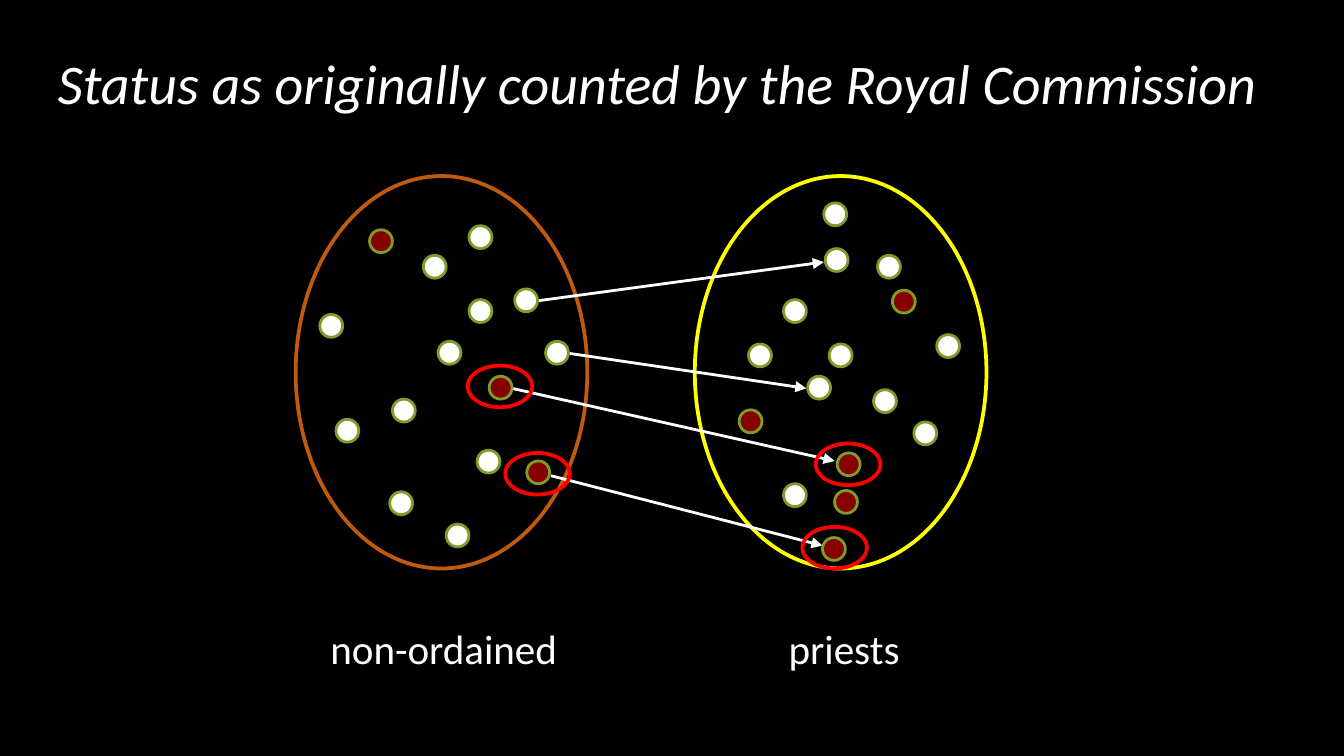
"""Build a slide of two groups of people, with arrows for those who moved between them."""
import pptx
import pptx.dml.color
import pptx.enum.shapes
import pptx.enum.text
import pptx.oxml.ns
import pptx.util
import lxml.etree

COLORS = {
    "background": "000000",
    "text": "FFFFFF",
    "non-ordained": "C05A0E",
    "priests": "FFFF00",
    "white": "FFFFFF",
    "red": "860000",
    "rim": "7F9D26",
    "ring": "FF0000",
    "arrow": "FFFFFF",
}
COLUMNS, ROWS = 1000, 562.5
DOT = 17

presentation = pptx.Presentation()
presentation.slide_width = pptx.util.Inches(10)
presentation.slide_height = presentation.slide_width * 9 // 16
column = presentation.slide_width / COLUMNS
row = presentation.slide_height / ROWS
slide = presentation.slides.add_slide(presentation.slide_layouts[6])
slide.background.fill.solid()
slide.background.fill.fore_color.rgb = pptx.dml.color.RGBColor.from_string(COLORS["background"])


def add_text(text, left, top, width, height, size=22, italic=False):
    shape = slide.shapes.add_textbox(
        round(left * column), round(top * row), round(width * column), round(height * row))
    shape.text_frame.word_wrap = True
    shape.text_frame.auto_size = pptx.enum.text.MSO_AUTO_SIZE.SHAPE_TO_FIT_TEXT
    paragraph = shape.text_frame.paragraphs[0]
    run = paragraph.add_run()
    run.text = text
    run.font.name = "Calibri"
    run.font.size = pptx.util.Pt(size)
    run.font.italic = italic
    run.font.color.rgb = pptx.dml.color.RGBColor.from_string(COLORS["text"])


def add_ellipse(left, top, width, height, line, fill=None, weight=2):
    shape = slide.shapes.add_shape(
        pptx.enum.shapes.MSO_SHAPE.OVAL,
        round(left * column), round(top * row), round(width * column), round(height * row))
    shape.shadow.inherit = False
    if fill:
        shape.fill.solid()
        shape.fill.fore_color.rgb = pptx.dml.color.RGBColor.from_string(COLORS[fill])
    else:
        shape.fill.background()
    shape.line.color.rgb = pptx.dml.color.RGBColor.from_string(COLORS[line])
    shape.line.width = pptx.util.Pt(weight)


add_ellipse(220, 131, 217, 292, "non-ordained")
add_text("Status as originally counted by the Royal Commission", 33, 31, 975, 61, size=30, italic=True)
add_ellipse(517, 131, 217, 292, "priests")
add_text("non-ordained", 236, 459, 201, 47)
add_text("priests", 577, 459, 116, 47)

dots = [
    ("white", [(583, 223), (557, 256), (617, 256), (653, 190), (650, 290), (680, 314)]),
    ("red", [(664, 216), (550, 305)]),
    ("white", [(613, 151)]),
    ("red", [(621, 365), (275, 171)]),
    ("white", [(290, 366), (383, 215), (238, 234), (355, 335), (315, 190), (292, 297)]),
    ("red", [(364, 280)]),
    ("white", [(332, 390), (406, 254), (326, 254), (349, 168), (250, 312), (349, 223)]),
    ("red", [(392, 343)]),
    ("white", [(583, 360), (697, 249)]),
]
arrows = [
    (399, 224, 613, 195),
    (417, 262, 600, 289),
    (381, 289, 621, 343),
    (410, 354, 612, 406),
]
arrivals = [
    ("white", [(614, 185), (601, 280)]),
    ("red", [(623, 337), (612, 400)]),
]
rings = [(607, 330), (376, 337), (597, 392), (348, 272)]

for start_x, start_y, end_x, end_y in arrows:
    connector = slide.shapes.add_connector(
        pptx.enum.shapes.MSO_CONNECTOR.STRAIGHT,
        round(start_x * column), round(start_y * row), round(end_x * column), round(end_y * row))
    connector.line.color.rgb = pptx.dml.color.RGBColor.from_string(COLORS["arrow"])
    connector.line.width = pptx.util.Pt(1.5)
    line = connector.line._get_or_add_ln()
    lxml.etree.SubElement(line, pptx.oxml.ns.qn("a:tailEnd"), type="triangle")
    lxml.etree.SubElement(connector._element.spPr, pptx.oxml.ns.qn("a:effectLst"))

for fill, places in dots + arrivals:
    for left, top in places:
        add_ellipse(left, top, DOT, DOT, "rim", fill=fill, weight=1.5)

for left, top in rings:
    add_ellipse(left, top, 48, 31, "ring")

presentation.save("out.pptx")
